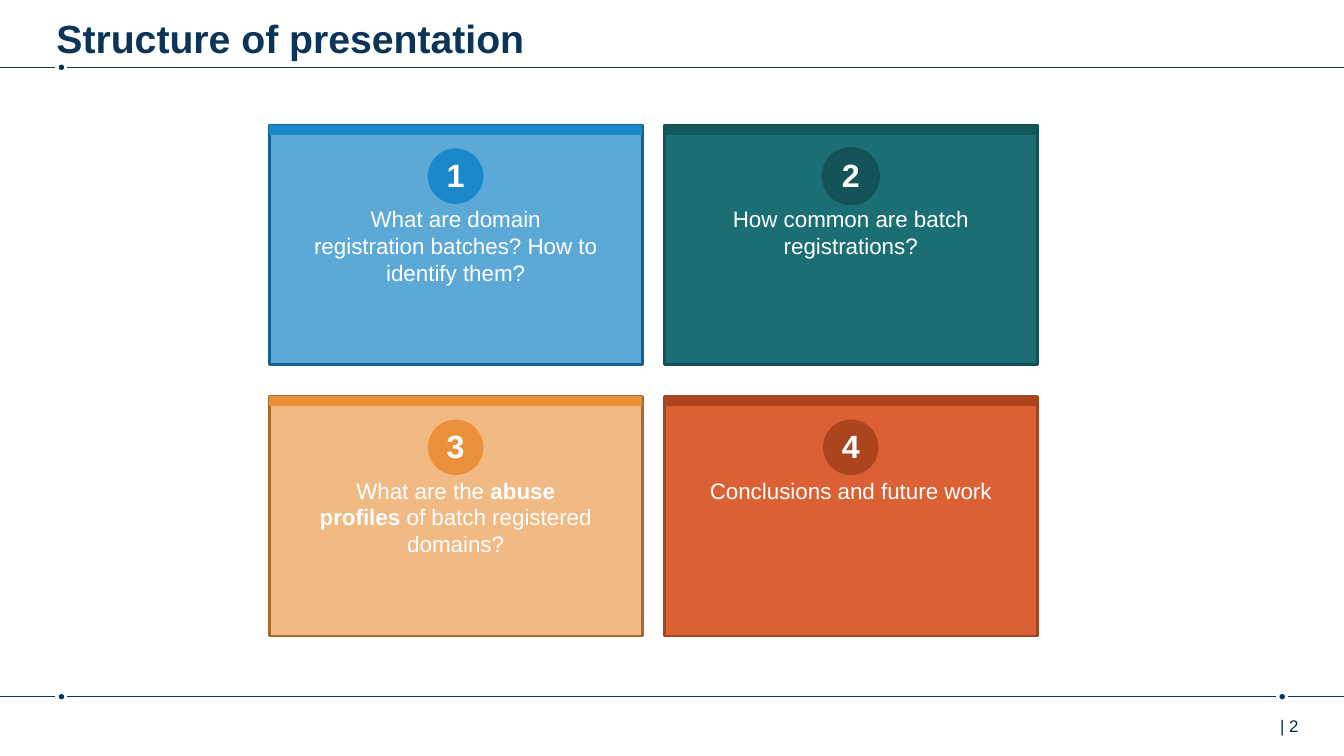
from dataclasses import dataclass

from lxml.etree import SubElement
from pptx import Presentation
from pptx.dml.color import RGBColor
from pptx.enum.shapes import MSO_CONNECTOR, MSO_SHAPE
from pptx.enum.text import MSO_ANCHOR, MSO_AUTO_SIZE, PP_ALIGN
from pptx.oxml.ns import qn
from pptx.util import Inches, Pt


@dataclass(frozen=True)
class Theme:
    """Colours, font and type sizes of the slide."""
    font: str = "Arial"
    navy: str = "0B3458"
    ink: str = "002B49"
    white: str = "FFFFFF"
    title: int = 28
    number: int = 23
    body: int = 16
    footer: int = 12
    border: int = 2
    rule: int = 1


@dataclass(frozen=True)
class Topic:
    """One card: its runs of (text, bold), line count and colours."""
    runs: tuple
    lines: int
    fill: str
    border: str
    accent: str
    opacity: int = 100
    bar_opacity: int = 100
    ring: str = ""


class Deck:
    """Draws elements on the current slide, placed in percent of its size."""

    def __init__(self, theme):
        """Open a title-only slide in wide format."""
        self.theme = theme
        self.prs = Presentation()
        self.prs.slide_width, self.prs.slide_height = Inches(13.33), Inches(7.5)
        self.slide = self.prs.slides.add_slide(self.prs.slide_layouts[5])

    def x(self, share):
        """Return a share of the slide width."""
        return round(self.prs.slide_width * share / 100)

    def y(self, share):
        """Return a share of the slide height."""
        return round(self.prs.slide_height * share / 100)

    def box(self, left, top, width, height):
        """Return a frame in slide units."""
        return self.x(left), self.y(top), self.x(width), self.y(height)

    def apply(self, target, formats):
        """Set each attribute named in formats."""
        for name, value in formats.items():
            setattr(target, name, value)

    def fill_text(self, frame, runs, size, color, align=PP_ALIGN.LEFT, **formats):
        """Fill a text frame with one paragraph of (text, bold) runs."""
        self.apply(frame, {"word_wrap": True, **formats})
        paragraph = frame.paragraphs[0]
        paragraph.alignment = align
        for words, bold in runs:
            run = paragraph.add_run()
            run.text = words
            self.apply(run.font, {"name": self.theme.font, "size": Pt(size), "bold": bold})
            run.font.color.rgb = RGBColor.from_string(color)

    def title(self, words, frame):
        """Place and format the title placeholder."""
        heading = self.slide.shapes.title
        self.apply(heading, dict(zip(("left", "top", "width", "height"), self.box(*frame))))
        self.fill_text(heading.text_frame, [(words, True)], self.theme.title, self.theme.navy,
                       auto_size=MSO_AUTO_SIZE.NONE, vertical_anchor=MSO_ANCHOR.TOP,
                       margin_top=Inches(0.09))

    def text(self, runs, frame, size, color, **formats):
        """Add a text box."""
        area = self.slide.shapes.add_textbox(*self.box(*frame))
        self.fill_text(area.text_frame, runs, size, color, **formats)

    def shape(self, preset, frame, fill, opacity=100, border=""):
        """Add a filled shape, with a border when one is named."""
        shape = self.slide.shapes.add_shape(preset, *frame)
        shape.shadow.inherit = False
        shape.fill.solid()
        shape.fill.fore_color.rgb = RGBColor.from_string(fill)
        if opacity < 100:
            tint = shape._element.spPr.find(f"{qn('a:solidFill')}/{qn('a:srgbClr')}")
            SubElement(tint, qn("a:alpha")).set("val", str(opacity * 1000))
        if border:
            shape.line.color.rgb = RGBColor.from_string(border)
            shape.line.width = Pt(self.theme.border)
        else:
            shape.line.fill.background()
        return shape

    def circle(self, left, top, diameter, fill, border=""):
        """Add a circle whose diameter is a share of the slide width."""
        side = self.x(diameter)
        return self.shape(MSO_SHAPE.OVAL, (self.x(left), self.y(top), side, side),
                          fill, border=border)

    def rule(self, level, dots):
        """Draw a full-width line broken by a dot at each given position."""
        gap, dot = 0.45, 0.4
        starts = [0] + [centre + gap for centre in dots]
        ends = [centre - gap for centre in dots] + [100]
        for start, end in zip(starts, ends):
            line = self.slide.shapes.add_connector(
                MSO_CONNECTOR.STRAIGHT, self.x(start), self.y(level), self.x(end), self.y(level))
            line.line.color.rgb = RGBColor.from_string(self.theme.navy)
            line.line.width = Pt(self.theme.rule)
            SubElement(line._element.spPr, qn("a:effectLst"))
        for centre in dots:
            self.circle(centre - dot / 2, level - 0.35, dot, self.theme.navy)

    def card(self, number, topic, left, top):
        """Draw a numbered card with its top bar and caption."""
        width, height = 27.75, 31.73
        self.shape(MSO_SHAPE.RECTANGLE, self.box(left, top, width, height),
                   topic.fill, topic.opacity, topic.border)
        self.shape(MSO_SHAPE.RECTANGLE, self.box(left, top, width, 1.33),
                   topic.accent, topic.bar_opacity)
        badge = 4.13
        disc = self.circle(left + (width - badge) / 2, top + 3.1, badge, topic.accent, topic.ring)
        self.fill_text(disc.text_frame, [(str(number), True)], self.theme.number,
                       self.theme.white, PP_ALIGN.CENTER, vertical_anchor=MSO_ANCHOR.MIDDLE,
                       margin_left=0, margin_right=0, margin_top=0, margin_bottom=Inches(0.03))
        caption = 22.73
        self.text(topic.runs, (left + (width - caption) / 2, top + 10,
                               caption, 1.33 + 3.6 * topic.lines),
                  self.theme.body, self.theme.white, align=PP_ALIGN.CENTER,
                  auto_size=MSO_AUTO_SIZE.SHAPE_TO_FIT_TEXT)


TOPICS = (
    Topic((("What are domain registration batches? How to identify them?", False),),
          3, "1A87C9", "126292", "1A87C9", opacity=71),
    Topic((("How common are batch registrations?", False),),
          2, "1B6F74", "135154", "145357", bar_opacity=80, ring="135154"),
    Topic((("What are the ", False), ("abuse profiles ", True),
           ("of batch registered domains?", False)),
          3, "EA903A", "AA692A", "EA903A", opacity=62),
    Topic((("Conclusions and future work", False),), 1, "DB6033", "9F4625", "AC441E"),
)


def main():
    """Build the slide and save it."""
    theme = Theme()
    deck = Deck(theme)
    deck.title("Structure of presentation", (3.45, 0.67, 88.97, 6.53))
    deck.rule(8.9, [4.57])
    deck.rule(92.15, [4.57, 95.4])
    deck.text([("| 2", False)], (94.2, 94, 5.8, 5.33), theme.footer, theme.ink,
              margin_left=Inches(0.14), margin_right=0)
    for index, topic in enumerate(TOPICS):
        row, column = divmod(index, 2)
        deck.card(index + 1, topic, 20.03 + 29.4 * column, 16.53 + 35.87 * row)
    deck.prs.save("out.pptx")


if __name__ == "__main__":
    main()
